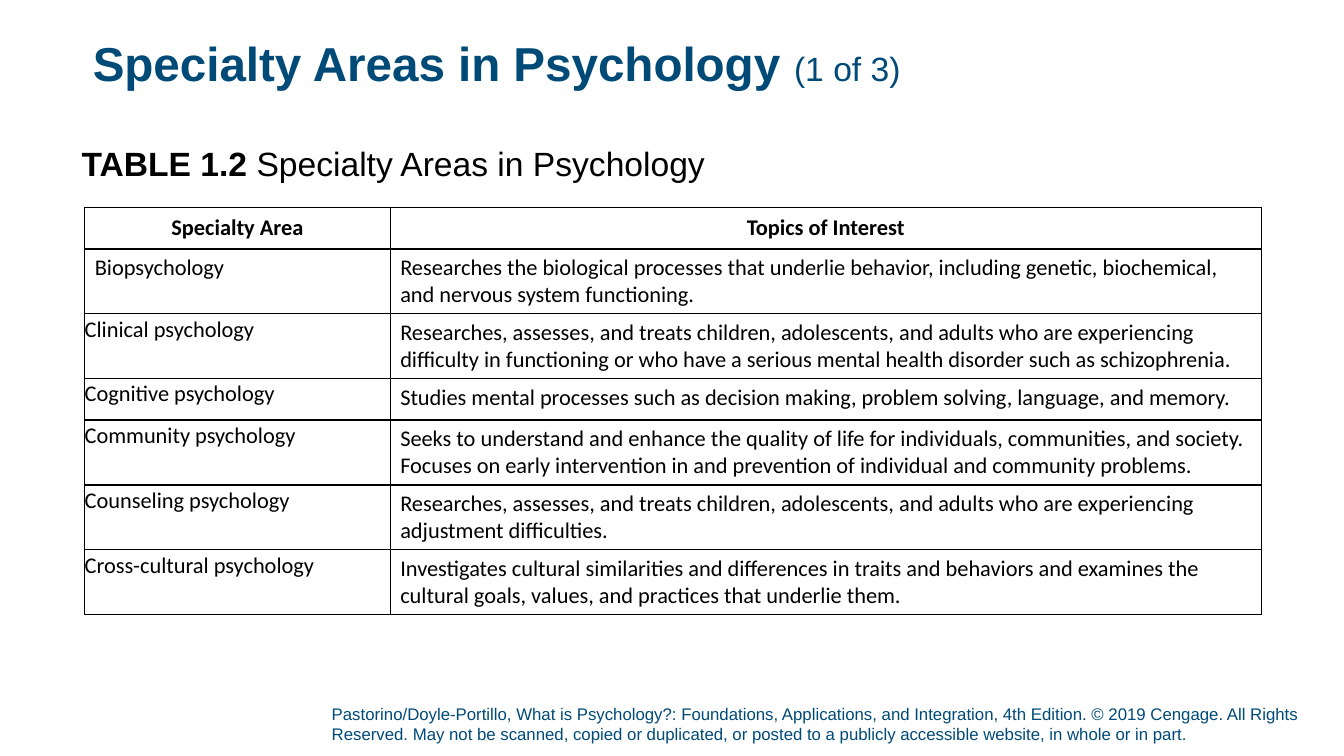
from lxml import etree
from pptx import Presentation, util as u
from pptx.dml.color import RGBColor
from pptx.enum import text
from pptx.oxml.ns import qn

BLUE = "004A78"
BLACK = "000000"
COLUMN_WIDTHS = (3.03, 8.64)
ROW_HEIGHT = 0.41

HEADINGS = ("Specialty Area", "Topics of Interest")
SPECIALTIES = [
    ("Biopsychology",
     "Researches the biological processes that underlie behavior, including genetic, "
     "biochemical, and nervous system functioning."),
    ("Clinical psychology",
     "Researches, assesses, and treats children, adolescents, and adults who are experiencing "
     "difficulty in functioning or who have a serious mental health disorder such as "
     "schizophrenia."),
    ("Cognitive psychology",
     "Studies mental processes such as decision making, problem solving, language, and memory."),
    ("Community psychology",
     "Seeks to understand and enhance the quality of life for individuals, communities, and "
     "society. Focuses on early intervention in and prevention of individual and community "
     "problems."),
    ("Counseling psychology",
     "Researches, assesses, and treats children, adolescents, and adults who are experiencing "
     "adjustment difficulties."),
    ("Cross-cultural psychology",
     "Investigates cultural similarities and differences in traits and behaviors and examines "
     "the cultural goals, values, and practices that underlie them."),
]
CREDIT = ("Pastorino/Doyle-Portillo, What is Psychology?: Foundations, Applications, and "
          "Integration, 4th Edition. © 2019 Cengage. All Rights Reserved. May not be scanned, "
          "copied or duplicated, or posted to a publicly accessible website, in whole or in part.")


def apply(target, **values):
    for name, value in values.items():
        setattr(target, name, value)


def add_run(paragraph, words, size, color, name="Arial", bold=False):
    run = paragraph.add_run()
    run.text = words
    apply(run.font, size=u.Pt(size), name=name, bold=bold)
    run.font.color.rgb = RGBColor.from_string(color)


def set_margins(target, margin):
    apply(target, **{f"margin_{side}": u.Inches(margin)
                     for side in ("left", "top", "right", "bottom")})


def fill_text(shape, box, runs, anchor=text.MSO_ANCHOR.TOP, bottom=0, **paragraph_format):
    """Place a text shape and write runs of (words, size, color, bold)."""
    left, top, width, height = map(u.Inches, box)
    apply(shape, left=left, top=top, width=width, height=height)
    frame = shape.text_frame
    set_margins(frame, 0)
    apply(frame, word_wrap=True, auto_size=text.MSO_AUTO_SIZE.NONE,
          vertical_anchor=anchor, margin_bottom=u.Inches(bottom))
    paragraph = frame.paragraphs[0]
    apply(paragraph, alignment=text.PP_ALIGN.LEFT, **paragraph_format)
    for words, size, color, bold in runs:
        add_run(paragraph, words, size, color, bold=bold)


def add_text(slide, box, runs, **formats):
    shape = slide.shapes.add_textbox(*map(u.Inches, box))
    fill_text(shape, box, runs, **formats)


def set_borders(cell, color, width):
    properties = cell._tc.get_or_add_tcPr()
    for side in ("a:lnL", "a:lnR", "a:lnT", "a:lnB"):
        line = etree.SubElement(properties, qn(side), w=str(u.Pt(width)))
        fill = etree.SubElement(line, qn("a:solidFill"))
        etree.SubElement(fill, qn("a:srgbClr"), val=color)


def fill_cell(cell, words, heading, flush):
    """Write a cell; a flush cell has no margins and a fixed line pitch."""
    set_borders(cell, BLACK, 1)
    cell.fill.background()
    paragraph = cell.text_frame.paragraphs[0]
    if heading:
        cell.vertical_anchor = text.MSO_ANCHOR.MIDDLE
        paragraph.alignment = text.PP_ALIGN.CENTER
    if flush:
        set_margins(cell, 0)
        paragraph.line_spacing = u.Pt(20.9)
    add_run(paragraph, words, 16, BLACK, "Calibri", heading)


def add_specialty_table(slide):
    rows = [HEADINGS, *SPECIALTIES]
    frame = slide.shapes.add_table(
        len(rows), len(HEADINGS), u.Inches(0.84), u.Inches(2.06),
        u.Inches(sum(COLUMN_WIDTHS)), u.Inches(ROW_HEIGHT * len(rows)))
    table = frame.table
    apply(table, first_row=False, horz_banding=False)
    for column, width in zip(table.columns, COLUMN_WIDTHS):
        column.width = u.Inches(width)
    for i, row in enumerate(rows):
        table.rows[i].height = u.Inches(ROW_HEIGHT)
        for j, words in enumerate(row):
            fill_cell(table.cell(i, j), words, heading=i == 0, flush=i > 1 and j == 0)


def main():
    presentation = Presentation()
    apply(presentation, slide_width=u.Inches(13.33), slide_height=u.Inches(7.5))
    slide = presentation.slides.add_slide(presentation.slide_layouts[5])
    add_text(slide, (3.29, 6.98, 9.79, 0.45), [(CREDIT, 12, BLUE, False)],
             anchor=text.MSO_ANCHOR.BOTTOM, bottom=0.05)
    fill_text(slide.shapes.title, (0.92, 0.4, 11.5, 0.74),
              [("Specialty Areas in Psychology ", 34, BLUE, True),
               ("(1 of 3)", 24, BLUE, False)], line_spacing=0.9)
    add_text(slide, (0.81, 1.46, 11.71, 0.46),
             [("TABLE 1.2", 24, BLACK, True),
              (" Specialty Areas in Psychology", 24, BLACK, False)], line_spacing=0.9)
    add_specialty_table(slide)
    presentation.save("out.pptx")


if __name__ == "__main__":
    main()
